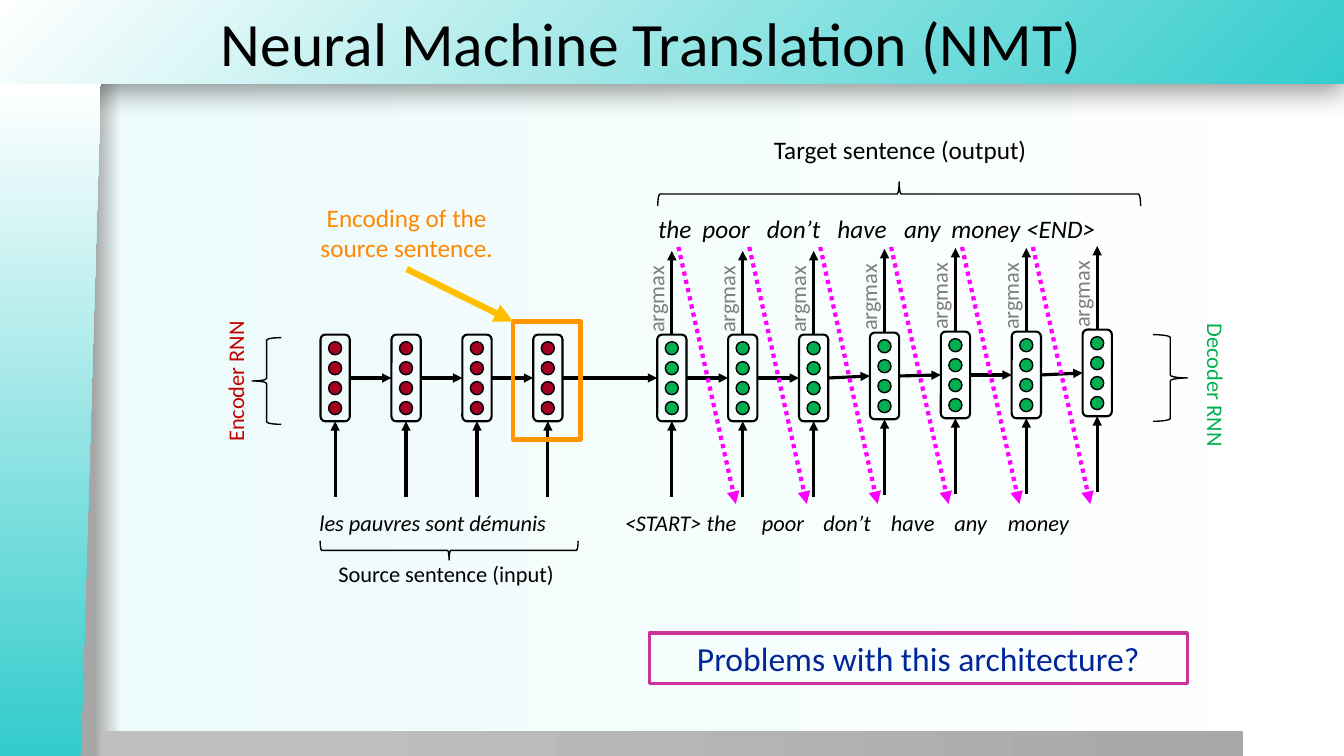
import dataclasses
import itertools
import typing

import lxml.etree
import pptx
import pptx.dml.color
import pptx.enum.dml
import pptx.enum.shapes
import pptx.enum.text
import pptx.oxml.ns
import pptx.util

# Lengths count cells of a square grid, ten to the inch.
GRID = pptx.util.Inches(0.1)
COLUMNS, ROWS = 133.33, 75
PITCH = 42.2 / 6  # from one RNN state to the next
STATE_WIDTH, STATE_HEIGHT = 2.9, 8.6
STATE_TOP = 33.2
BLACK, TEAL, WHITE = "000000", "34CCCC", "FFFFFF"

Shape = pptx.enum.shapes.MSO_SHAPE
Align = pptx.enum.text.PP_ALIGN
qn = pptx.oxml.ns.qn


class Frame(typing.NamedTuple):
    left: float
    top: float
    width: float
    height: float


class Point(typing.NamedTuple):
    x: float
    y: float


@dataclasses.dataclass
class State:
    left: float
    lift: float
    color: str

    @property
    def middle(self) -> float:
        return self.left + STATE_WIDTH / 2


@dataclasses.dataclass
class Label:
    text: str
    frame: Frame
    size: float = 16
    color: str = BLACK
    rotation: float = 0
    italic: bool = False
    wrap: bool = False
    align: Align = Align.LEFT
    tabs: tuple[float, ...] = ()


@dataclasses.dataclass
class Brace:
    kind: Shape
    frame: Frame
    rotation: float = 0


def span(cells: float) -> int:
    return round(cells * GRID)


def rgb(color: str) -> pptx.dml.color.RGBColor:
    return pptx.dml.color.RGBColor.from_string(color)


def write(frame, text: str, size: float, color: str, align: Align = Align.LEFT, italic: bool = False):
    paragraph = frame.paragraphs[0]
    paragraph.alignment = align
    run = paragraph.add_run()
    run.text = text
    run.font.name, run.font.size = "Calibri", pptx.util.Pt(size)
    run.font.italic, run.font.color.rgb = italic, rgb(color)
    return paragraph


def add_shape(kind: Shape, frame: Frame, fill: str = "", line: str = "", weight: float = 1):
    shape = slide.shapes.add_shape(kind, *map(span, frame))
    shape.shadow.inherit = False
    if fill:
        shape.fill.solid()
        shape.fill.fore_color.rgb = rgb(fill)
    else:
        shape.fill.background()
    if line:
        shape.line.color.rgb = rgb(line)
        shape.line.width = pptx.util.Pt(weight)
    else:
        shape.line.fill.background()
    return shape


def set_gradient(fill, holder, stops: list[tuple[int, str]], from_corner: bool = False) -> None:
    """Fill left to right, or outwards from the bottom right corner."""
    fill.gradient()
    gradient = holder.find(qn("a:gradFill"))
    for child in list(gradient):
        gradient.remove(child)
    stop_list = lxml.etree.SubElement(gradient, qn("a:gsLst"))
    for share, color in stops:
        stop = lxml.etree.SubElement(stop_list, qn("a:gs"), pos=str(share * 1000))
        lxml.etree.SubElement(stop, qn("a:srgbClr"), val=color)
    if from_corner:
        circle = lxml.etree.SubElement(gradient, qn("a:path"), {"path": "circle"})
        lxml.etree.SubElement(circle, qn("a:fillToRect"), l="100000", t="100000")
    else:
        lxml.etree.SubElement(gradient, qn("a:lin"), ang="0", scaled="0")


def add_panel(kind: Shape, frame: Frame, stops: list[tuple[int, str]], from_corner: bool = False):
    panel = add_shape(kind, frame)
    set_gradient(panel.fill, panel._element.spPr, stops, from_corner)
    return panel


def add_arrow(start: Point, end: Point, color: str = BLACK, weight: float = 2.25, dotted: bool = False):
    arrow = slide.shapes.add_connector(
        pptx.enum.shapes.MSO_CONNECTOR.STRAIGHT, *map(span, (*start, *end)))
    arrow.line.color.rgb = rgb(color)
    arrow.line.width = pptx.util.Pt(weight)
    if dotted:
        arrow.line.dash_style = pptx.enum.dml.MSO_LINE.ROUND_DOT
    properties = arrow._element.spPr
    lxml.etree.SubElement(properties.find(qn("a:ln")), qn("a:tailEnd"), type="triangle")
    lxml.etree.SubElement(properties, qn("a:effectLst"))
    return arrow


def add_label(label: Label):
    box = slide.shapes.add_textbox(*map(span, label.frame))
    box.rotation = label.rotation
    box.text_frame.word_wrap = label.wrap
    paragraph = write(box.text_frame, label.text, label.size, label.color, label.align, label.italic)
    if label.tabs:
        tab_list = lxml.etree.SubElement(paragraph._p.get_or_add_pPr(), qn("a:tabLst"))
        for stop in label.tabs:
            lxml.etree.SubElement(tab_list, qn("a:tab"), pos=str(span(stop)), algn="l")
    return box


def add_state(state: State):
    """Draw one hidden state with its four units and its input arrow."""
    top = STATE_TOP - state.lift
    cell = add_shape(Shape.ROUNDED_RECTANGLE, Frame(state.left, top, STATE_WIDTH, STATE_HEIGHT),
                     line=BLACK, weight=1.5)
    for unit in range(4):
        add_shape(Shape.OVAL, Frame(state.left + 0.8, top + 0.7 + 1.98 * unit, 1.3, 1.3),
                  state.color, BLACK)
    feed = add_arrow(Point(state.middle, 49.3 - state.lift), Point(state.middle, top + STATE_HEIGHT))
    feed.end_connect(cell, 2)
    return cell


presentation = pptx.Presentation()
presentation.slide_width, presentation.slide_height = span(COLUMNS), span(ROWS)
slide = presentation.slides.add_slide(presentation.slide_layouts[5])
background = slide.background.fill
background.solid()
set_gradient(background, slide._element.find(".//" + qn("p:bgPr")),
             [(7, "A6A6A6"), (9, "EDFBFB"), (100, WHITE)])

banner = add_panel(Shape.RECTANGLE, Frame(0, 0, COLUMNS, 8.3), [(0, TEAL), (100, WHITE)], True)
shadow = lxml.etree.SubElement(banner._element.spPr.find(qn("a:effectLst")), qn("a:outerShdw"),
                               blurRad="254000", dist="76200", dir="5400000", algn="t")
shadow_color = lxml.etree.SubElement(shadow, qn("a:srgbClr"), val=BLACK)
lxml.etree.SubElement(shadow_color, qn("a:alpha"), val="40000")
add_panel(Shape.RECTANGLE, Frame(10, 72.5, 113.3, 2.6), [(20, "BFBFBF"), (100, "A7A7A7")])
sidebar = add_panel(Shape.FLOWCHART_MANUAL_INPUT, Frame(-28.4, 36.7, 66.8, 10),
                    [(1, TEAL), (100, WHITE)])
sidebar.rotation = 270
sidebar._element.spPr.find(qn("a:xfrm")).set("flipV", "1")

title = slide.shapes.title
title.left, title.top, title.width, title.height = map(span, Frame(20.9, 0, 112.4, 8.3))
title.text_frame.vertical_anchor = pptx.enum.text.MSO_ANCHOR.MIDDLE
write(title.text_frame, "Neural Machine Translation (NMT)", 44, BLACK)
slide.shapes._spTree.append(title._element)

encoder = [State(31.8 + PITCH * step, 0, "A50021") for step in range(4)]
decoder = [State(65.2 + PITCH * step, lift, "00B050")
           for step, lift in enumerate((0, 0, 0, 0.2, 0.3, 0.3, 0.5))]
cells = [add_state(state) for state in encoder + decoder]
for earlier, later in itertools.pairwise(cells):
    recurrence = add_arrow(Point(0, 0), Point(0, 0))
    recurrence.begin_connect(earlier, 3)
    recurrence.end_connect(later, 1)

for state, cell in zip(decoder, cells[len(encoder):]):
    top = STATE_TOP - state.lift
    prediction = add_arrow(Point(state.middle, top), Point(state.middle, top - 8.3))
    prediction.begin_connect(cell, 0)
    add_label(Label("argmax", Frame(state.left - 4.5, 27.8 - state.lift, 8.7, 3.7),
                    color="7F7F7F", rotation=270))
for state in decoder[:-1]:
    add_arrow(Point(state.left + 2.1, 24.5), Point(state.left + 7.8, 50), "FF00FF", 3, True)

for label in (
    Label("the\tpoor\tdon’t\thave\tany\tmoney <END>", Frame(64.3, 20.7, 51.1, 4), 18,
          italic=True, wrap=True, tabs=(4.4, 10.8, 17.8, 24.4, 29.1)),
    Label("<START> the\tpoor\tdon’t\thave\tany\tmoney", Frame(61, 50, 53.5, 3.7),
          italic=True, wrap=True, tabs=(13.6, 19.7, 26.4, 32.7, 38)),
    Label("les pauvres sont démunis", Frame(30.7, 50, 27.5, 3.7), italic=True),
    Label("Source sentence (input)", Frame(32.6, 55.1, 23.7, 3.7)),
    Label("Target sentence (output)", Frame(75.8, 12.8, 27.4, 4), 18),
    Label("Encoder RNN", Frame(16.3, 35.9, 14.1, 3.7), color="C10000", rotation=270),
    Label("Decoder RNN", Frame(113.4, 36.5, 14.4, 3.7), color="00B150", rotation=90),
):
    add_label(label)

for brace in (
    Brace(Shape.LEFT_BRACE, Frame(25, 33.5, 2.9, 8.6)),
    Brace(Shape.RIGHT_BRACE, Frame(114.4, 33.2, 3.4, 8.6)),
    Brace(Shape.RIGHT_BRACE, Frame(43.6, 41.8, 1.9, 25.6), 90),
    Brace(Shape.RIGHT_BRACE, Frame(88, -4.7, 2.4, 47.9), 270),
):
    add_shape(brace.kind, brace.frame, line=BLACK).rotation = brace.rotation

add_shape(Shape.RECTANGLE, Frame(50.9, 31.9, 6.7, 11.7), line="FF9600", weight=3)
encoding = add_label(Label("Encoding of the source sentence.", Frame(27.8, 19.6, 25.1, 7.1), 18,
                           "FF8800", wrap=True, align=Align.CENTER))
pointer = add_arrow(Point(40.3, 26.7), Point(50.9, 31.9), "FFC000", 4.5)
pointer.begin_connect(encoding, 2)
question = add_shape(Shape.RECTANGLE, Frame(64.4, 62.8, 53.4, 5), line="CC3399", weight=2.25)
write(question.text_frame, "Problems with this architecture?", 24, "002699", Align.CENTER)

presentation.save("out.pptx")
